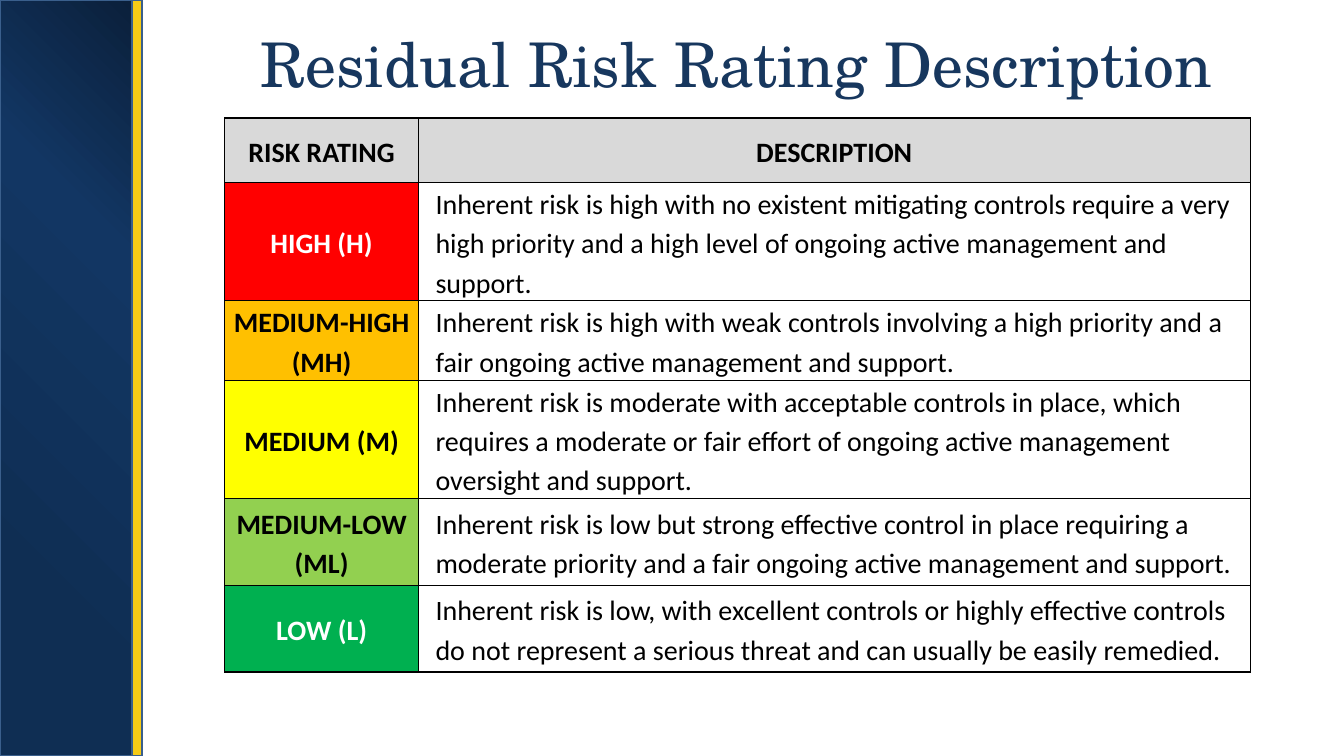
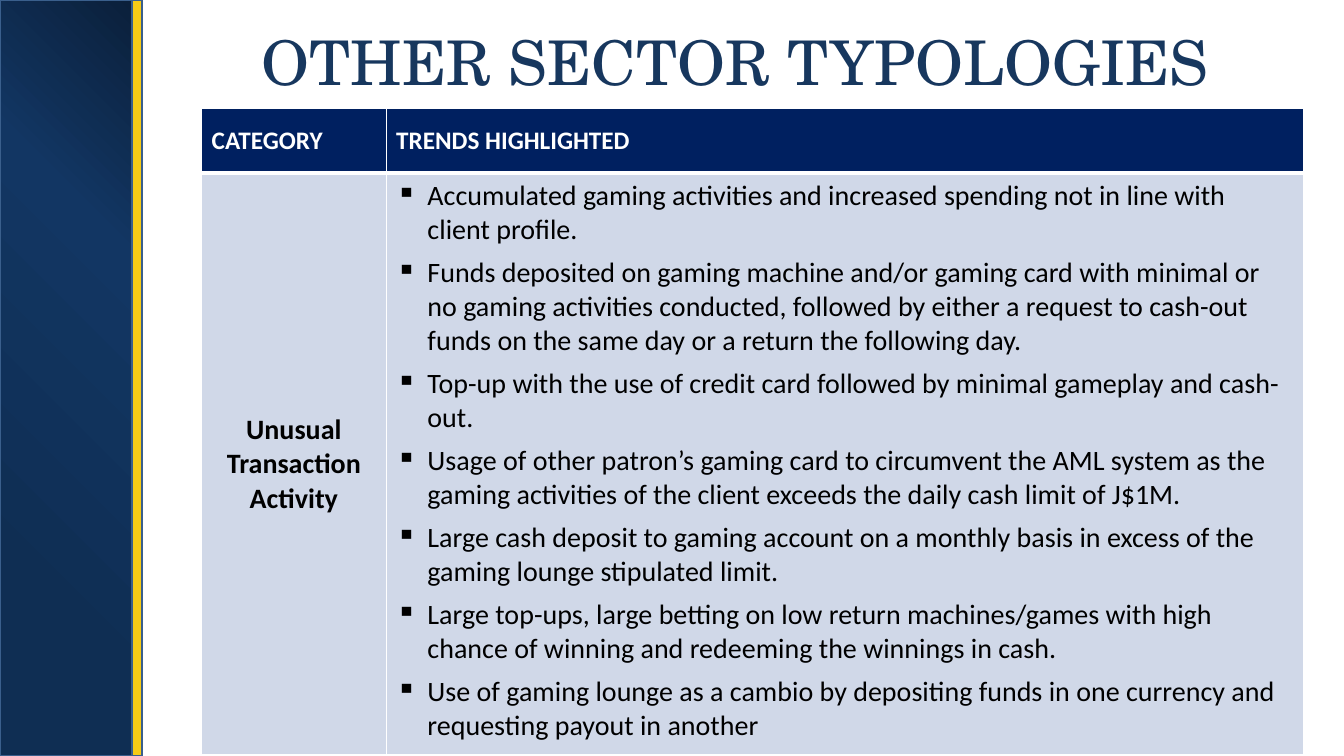
from lxml import etree
from pptx import Presentation, util as u
from pptx.dml.color import RGBColor
from pptx.enum import shapes, text
from pptx.oxml import parse_xml
from pptx.oxml.ns import qn

NS = 'xmlns:a="http://schemas.openxmlformats.org/drawingml/2006/main"'
NAVY, RULE, GOLD = "17375E", "3A5F8C", "F6CB16"
BLACK, WHITE = "000000", "FFFFFF"
CENTER, LEFT = text.PP_ALIGN.CENTER, text.PP_ALIGN.LEFT


def color(hex_value):
    return RGBColor.from_string(hex_value)


def fill_cell(cell, lines, size, ink, bold, align, fill, border, bottom=1):
    cell.vertical_anchor = text.MSO_ANCHOR.MIDDLE
    if fill:
        cell.fill.solid()
        cell.fill.fore_color.rgb = color(fill)
    else:
        cell.fill.background()
    tcPr = cell._tc.get_or_add_tcPr()
    for i, side in enumerate("LRTB"):
        width = u.Pt(bottom if side == "B" else 1)
        tcPr.insert(i, parse_xml(
            f'<a:ln{side} {NS} w="{width}"><a:solidFill>'
            f'<a:srgbClr val="{border}"/></a:solidFill></a:ln{side}>'))
    cell.text_frame.text = "\n".join(lines)
    for p in cell.text_frame.paragraphs:
        p.alignment = align
        for r in p.runs:
            r.font.name, r.font.size, r.font.bold = "Calibri", u.Pt(size), bold
            r.font.color.rgb = color(ink)


prs = Presentation()
prs.slide_width, prs.slide_height = u.Inches(13.33), u.Inches(7.5)
layout = prs.slide_layouts[5]

slides = []
for title, left, top in [("Residual Risk Rating Description", 1.83, 0),
                         ("OTHER SECTOR TYPOLOGIES", 1.82, -0.02)]:
    s = prs.slides.add_slide(layout)
    sp = s.shapes.title
    sp.left, sp.top = u.Inches(left), u.Inches(top)
    sp.width, sp.height = u.Inches(10.95), u.Inches(1.25)
    tf = sp.text_frame
    tf.text = title
    tf.vertical_anchor = text.MSO_ANCHOR.MIDDLE
    p = tf.paragraphs[0]
    p.alignment = CENTER
    font = p.runs[0].font
    font.name, font.size = "TeX Gyre Schola", u.Pt(44)
    font.color.rgb = color(NAVY)
    slides.append(s)
ratings, typologies = slides

bands = []
for left, width in [(0, 1.31), (1.31, 0.1)]:
    sp = ratings.shapes.add_shape(shapes.MSO_SHAPE.RECTANGLE, u.Inches(left), 0,
                                  u.Inches(width), prs.slide_height)
    sp.shadow.inherit = False
    sp.fill.solid()
    sp.fill.fore_color.rgb = color(GOLD)
    sp.line.color.rgb = color(RULE)
    sp.line.width = u.Pt(2)
    bands.append(sp)

stops = "".join(f'<a:gs pos="{pos * 1000}"><a:srgbClr val="{c}"/></a:gs>'
                for pos, c in [(0, "0B203B"), (29, "123663"), (79, "0F2E53")])
spPr = bands[0].element.spPr
spPr.replace(spPr.find(qn("a:solidFill")), parse_xml(
    f'<a:gradFill {NS}><a:gsLst>{stops}</a:gsLst><a:path path="circle">'
    '<a:fillToRect l="100000" b="100000"/></a:path></a:gradFill>'))
for i, sp in enumerate(bands):
    layout.shapes.element.insert(2 + i, sp.element)

risk_rows = [
    ("RISK RATING", "DESCRIPTION", "D9D9D9", BLACK, 0.64),
    ("HIGH (H)", "Inherent risk is high with no existent mitigating controls require a very high "
     "priority and a high level of ongoing active management and support.", "FF0000", WHITE, 1.17),
    ("MEDIUM-HIGH (MH)", "Inherent risk is high with weak controls involving a high priority and a "
     "fair ongoing active management and support.", "FFC000", BLACK, 0.79),
    ("MEDIUM (M)", "Inherent risk is moderate with acceptable controls in place, which requires a "
     "moderate or fair effort of ongoing active management oversight and support.",
     "FFFF00", BLACK, 1.17),
    ("MEDIUM-LOW (ML)", "Inherent risk is low but strong effective control in place requiring a "
     "moderate priority and a fair ongoing active management and support.", "92D050", BLACK, 0.86),
    ("LOW (L)", "Inherent risk is low, with excellent controls or highly effective controls do not "
     "represent a serious threat and can usually be easily remedied.", "00B050", WHITE, 0.86),
]
trends = [
    "Accumulated gaming activities and increased spending not in line with client profile.",
    "Funds deposited on gaming machine and/or gaming card with minimal or no gaming activities "
    "conducted, followed by either a request to cash-out funds on the same day or a return the "
    "following day.",
    "Top-up with the use of credit card followed by minimal gameplay and cash-out.",
    "Usage of other patron’s gaming card to circumvent the AML system as the gaming activities of "
    "the client exceeds the daily cash limit of J$1M.",
    "Large cash deposit to gaming account on a monthly basis in excess of the gaming lounge "
    "stipulated limit.",
    "Large top-ups, large betting on low return machines/games with high chance of winning and "
    "redeeming the winnings in cash.",
    "Use of gaming lounge as a cambio by depositing funds in one currency and requesting payout "
    "in another",
]

tables = []
for s, left, top, widths, heights in [
        (ratings, 2.23, 1.17, (1.92, 8.25), [row[-1] for row in risk_rows]),
        (typologies, 2, 1.08, (1.83, 9.1), (0.64, 5.77))]:
    table = s.shapes.add_table(len(heights), 2, u.Inches(left), u.Inches(top),
                               u.Inches(sum(widths)), u.Inches(sum(heights))).table
    table.horz_banding = False
    for col, width in zip(table.columns, widths):
        col.width = u.Inches(width)
    for row, height in zip(table.rows, heights):
        row.height = u.Inches(height)
    tables.append(table)
risk_table, trend_table = tables

for i, (rating, description, fill, ink, height) in enumerate(risk_rows):
    header = i == 0
    fill_cell(risk_table.cell(i, 0), [rating], 20, ink, True, CENTER, fill, BLACK)
    fill_cell(risk_table.cell(i, 1), [description], 20, BLACK, header,
              CENTER if header else LEFT, fill if header else None, BLACK)
    for cell in risk_table.rows[i].cells:
        cell.margin_left = cell.margin_right = u.Inches(0.05)
        cell.margin_top = cell.margin_bottom = 0
        cell.text_frame.paragraphs[0].line_spacing = 1.15
    if not header:
        pPr = risk_table.cell(i, 1).text_frame.paragraphs[0]._p.get_or_add_pPr()
        pPr.set("marL", str(u.Inches(0.12)))

for i, heading in enumerate(["CATEGORY", "TRENDS HIGHLIGHTED"]):
    fill_cell(trend_table.cell(0, i), [heading], 18, WHITE, True, LEFT, "002060", WHITE, 3)
fill_cell(trend_table.cell(1, 0), ["Unusual Transaction Activity"], 20, BLACK, True, CENTER,
          "D0D8E8", WHITE)
cell = trend_table.cell(1, 1)
fill_cell(cell, trends, 20, BLACK, False, LEFT, "D0D8E8", WHITE)
cell.vertical_anchor = text.MSO_ANCHOR.TOP
for p in cell.text_frame.paragraphs:
    p.space_after = u.Pt(0 if p.text == trends[-1] else 6)
    pPr = p._p.get_or_add_pPr()
    pPr.set("marL", str(u.Inches(0.31)))
    pPr.set("indent", str(-u.Inches(0.31)))
    etree.SubElement(pPr, qn("a:buChar")).set("char", "▪")

prs.save("out.pptx")
